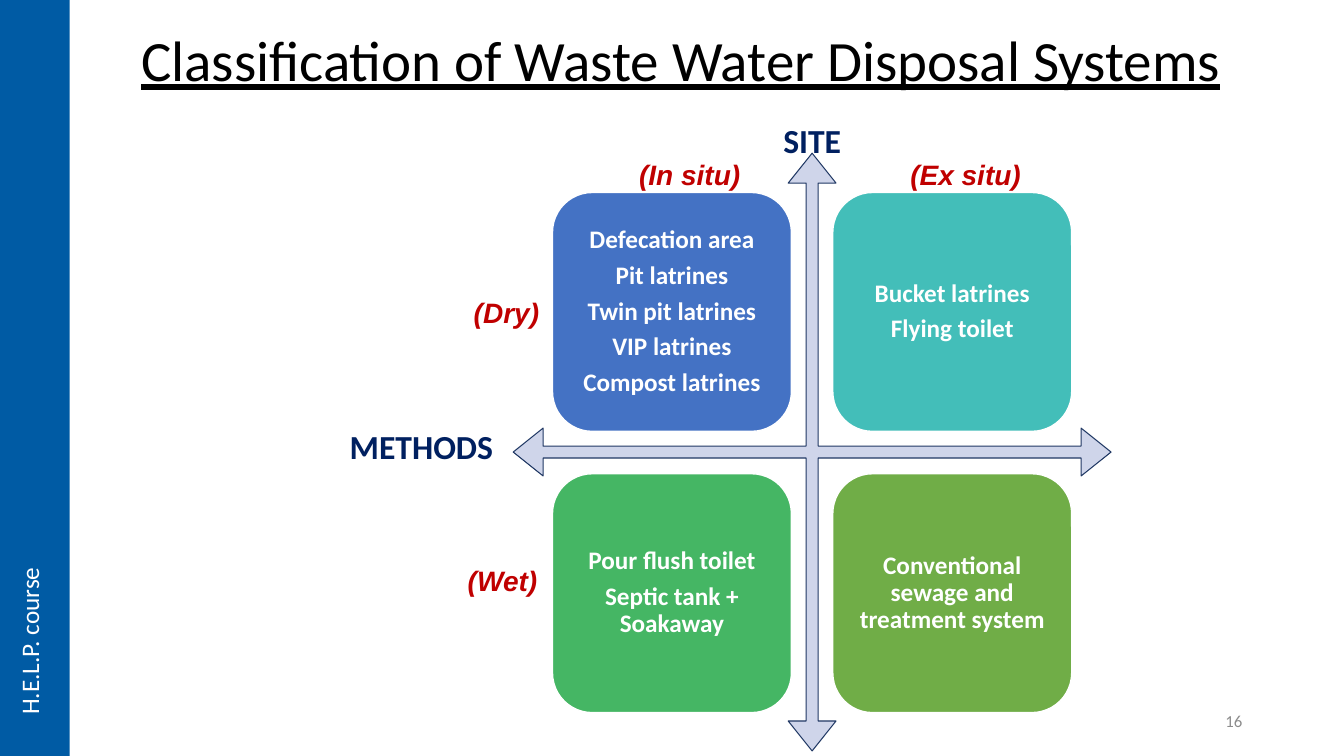
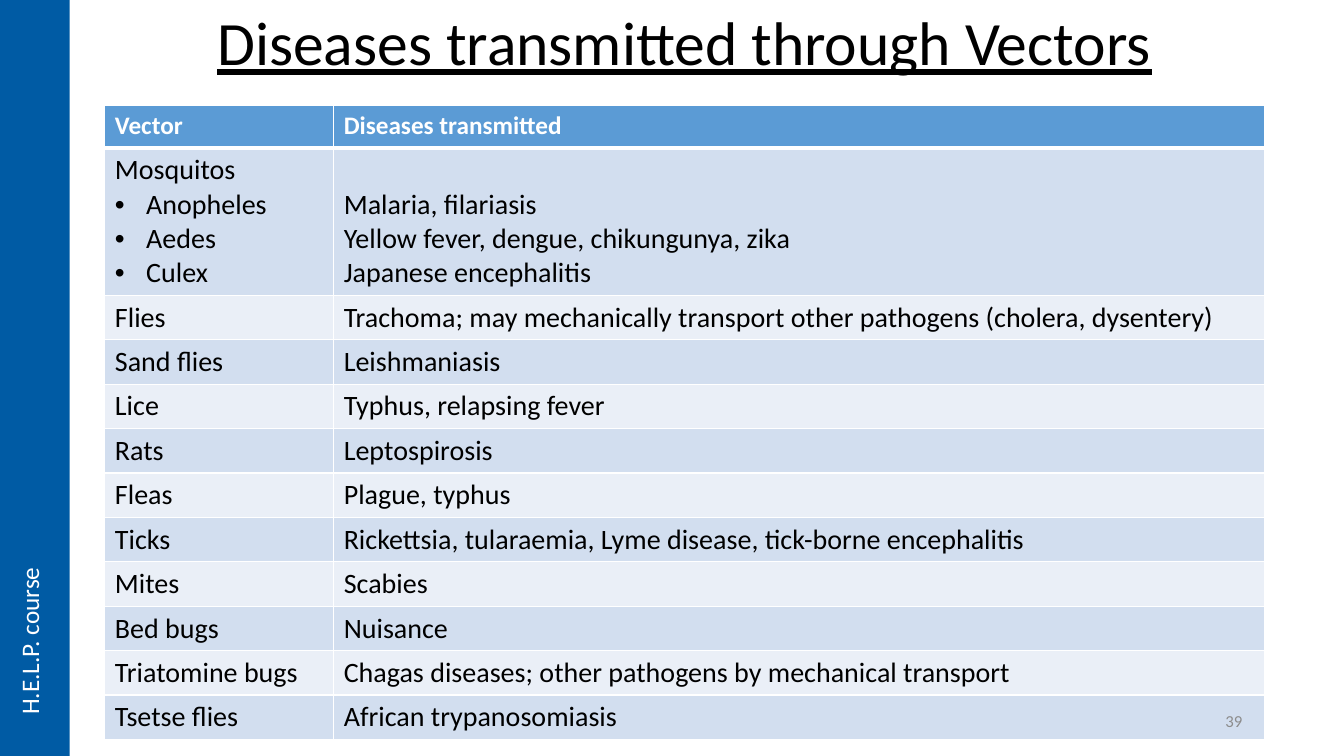
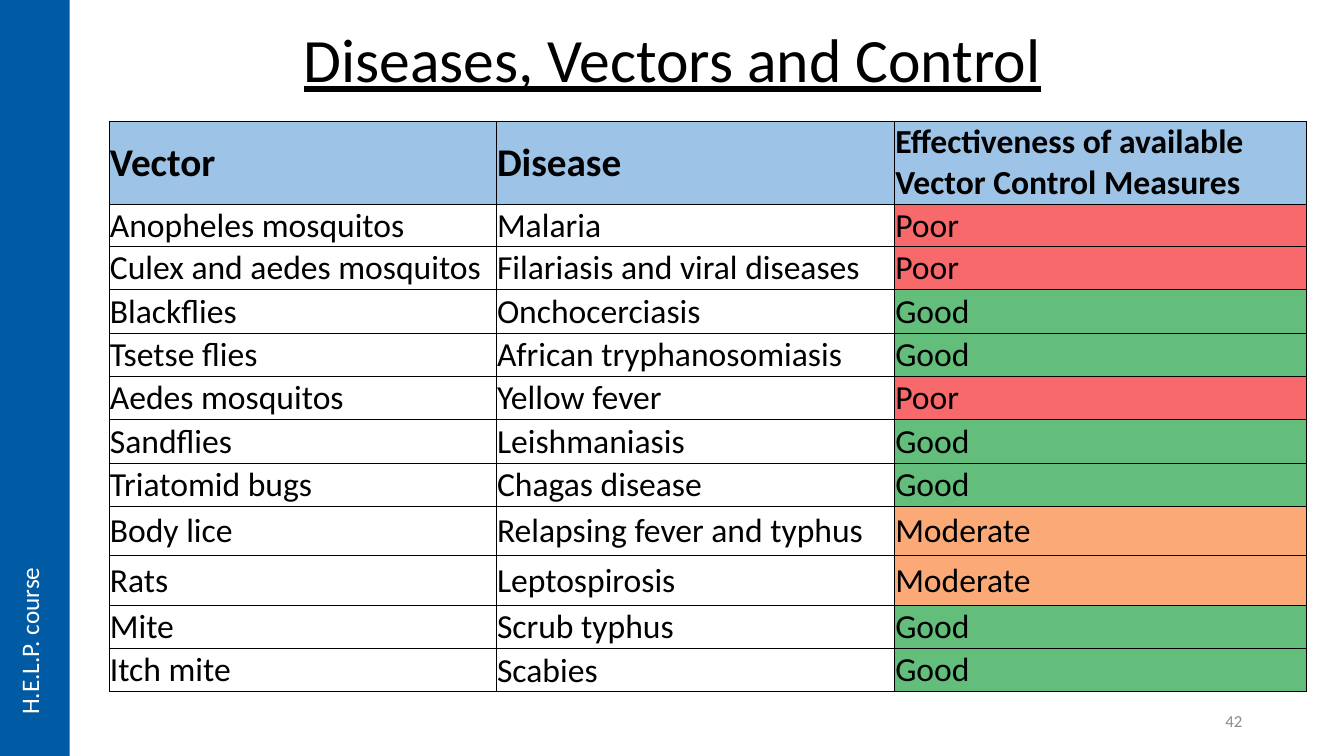
from lxml.etree import SubElement
from pptx import Presentation
from pptx.dml.color import RGBColor
from pptx.enum.shapes import MSO_SHAPE
from pptx.enum.text import MSO_ANCHOR, MSO_AUTO_SIZE, PP_ALIGN
from pptx.oxml.ns import qn
from pptx.util import Inches, Pt

BAND_BLUE = "005BA4"
NAVY = "002060"
RED = "C00000"
GREY = "8C8C8C"
WHITE = "FFFFFF"
BLACK = "000000"

QUADRANTS = [
    ("4472C4", ["Defecation area", "Pit latrines", "Twin pit latrines",
                "VIP latrines", "Compost latrines"]),
    ("43BEB9", ["Bucket latrines", "Flying toilet"]),
    ("45B664", ["Pour flush toilet", "Septic tank + Soakaway"]),
    ("70AD47", ["Conventional sewage and treatment system"]),
]

AXIS_LABELS = [
    ("METHODS", 3.37, 4.18, 1.64),
    ("SITE", 7.67, 1.14, 0.78),
]

SIDE_LABELS = [
    ("(Dry)", 4.6, 2.88, 0.85),
    ("(Wet)", 4.54, 5.54, 0.89),
    ("(In situ)", 6.24, 1.51, 1.21),
    ("(Ex situ)", 8.93, 1.51, 1.3),
]

TRANSMISSION = [
    (["Vector"], ["Diseases transmitted"]),
    (["Mosquitos", "Anopheles", "Aedes", "Culex"],
     ["Malaria, filariasis", "Yellow fever, dengue, chikungunya, zika",
      "Japanese encephalitis"]),
    (["Flies"], ["Trachoma; may mechanically transport other pathogens (cholera, dysentery)"]),
    (["Sand flies"], ["Leishmaniasis"]),
    (["Lice"], ["Typhus, relapsing fever"]),
    (["Rats"], ["Leptospirosis"]),
    (["Fleas"], ["Plague, typhus"]),
    (["Ticks"], ["Rickettsia, tularaemia, Lyme disease, tick-borne encephalitis"]),
    (["Mites"], ["Scabies"]),
    (["Bed bugs"], ["Nuisance"]),
    (["Triatomine bugs"], ["Chagas diseases; other pathogens by mechanical transport"]),
    (["Tsetse flies"], ["African trypanosomiasis"]),
]

CONTROL = [
    ("Vector", "Disease", "Effectiveness of available Vector Control Measures"),
    ("Anopheles mosquitos", "Malaria", "Poor"),
    ("Culex and aedes mosquitos", "Filariasis and viral diseases", "Poor"),
    ("Blackflies", "Onchocerciasis", "Good"),
    ("Tsetse flies", "African tryphanosomiasis", "Good"),
    ("Aedes mosquitos", "Yellow fever", "Poor"),
    ("Sandflies", "Leishmaniasis", "Good"),
    ("Triatomid bugs", "Chagas disease", "Good"),
    ("Body lice", "Relapsing fever and typhus", "Moderate"),
    ("Rats", "Leptospirosis", "Moderate"),
    ("Mite", "Scrub typhus", "Good"),
    ("Itch mite", "Scabies", "Good"),
]

RATING_FILLS = {"Poor": "F8696B", "Good": "63BE7B", "Moderate": "FBAA77"}


def color(value):
    """Turn a hex string into a colour."""
    return RGBColor.from_string(value)


def write(frame, lines, size, ink, bold=False, italic=False, underline=False,
          font="Calibri", align=PP_ALIGN.LEFT, line_spacing=None, space_after=None):
    """Write one paragraph per line into a text frame."""
    for number, line in enumerate(lines):
        para = frame.add_paragraph() if number else frame.paragraphs[0]
        para.alignment = align
        para.line_spacing = line_spacing
        para.space_after = space_after
        span = para.add_run()
        span.text = line
        span.font.name = font
        span.font.size = Pt(size)
        span.font.color.rgb = color(ink)
        span.font.bold = bold
        span.font.italic = italic
        span.font.underline = underline


def add_bullet(para):
    """Give a paragraph a round bullet with a hanging indent."""
    properties = para._p.get_or_add_pPr()
    properties.set("marL", str(Inches(0.31)))
    properties.set("indent", str(Inches(-0.31)))
    SubElement(properties, qn("a:buFont")).set("typeface", "Arial")
    SubElement(properties, qn("a:buChar")).set("char", "•")


def add_label(page, text, left, top, width, height, size, ink, wrap=False, **style):
    """Add a one-line text box and return its frame."""
    box = page.shapes.add_textbox(Inches(left), Inches(top), Inches(width), Inches(height))
    box.text_frame.word_wrap = wrap
    write(box.text_frame, [text], size, ink, **style)
    return box.text_frame


def add_panel(page, kind, left, top, width, height, fill, line=None, weight=1):
    """Add a flat preset shape."""
    panel = page.shapes.add_shape(kind, Inches(left), Inches(top), Inches(width), Inches(height))
    panel.shadow.inherit = False
    panel.fill.solid()
    panel.fill.fore_color.rgb = color(fill)
    if line:
        panel.line.color.rgb = color(line)
        panel.line.width = Pt(weight)
    else:
        panel.line.fill.background()
    return panel


def add_page(deck, title, left, top, size=44):
    """Add a slide with the side band and an underlined title."""
    page = deck.slides.add_slide(deck.slide_layouts[5])
    add_panel(page, MSO_SHAPE.RECTANGLE, 0, 0, 0.69, 7.5, BAND_BLUE)
    course = add_label(page, "H.E.L.P. course", 0.09, 5.61, 0.5, 1.58, 18, WHITE)
    course._txBody.bodyPr.set("vert", "vert270")
    heading = page.shapes.title
    heading.left, heading.top = Inches(left), Inches(top)
    heading.width, heading.height = Inches(11.5), Inches(0.91)
    heading.text_frame.auto_size = MSO_AUTO_SIZE.NONE
    heading.text_frame.vertical_anchor = MSO_ANCHOR.MIDDLE
    write(heading.text_frame, [title], size, BLACK, underline=True,
          align=PP_ALIGN.CENTER, line_spacing=0.9)
    return page


def add_page_number(page, number):
    """Add the page number at the lower right."""
    frame = add_label(page, number, 9.42, 6.95, 3, 0.4, 12, GREY,
                      wrap=True, align=PP_ALIGN.RIGHT)
    frame.vertical_anchor = MSO_ANCHOR.MIDDLE


def set_border(cell, side, ink, weight):
    """Draw one side of a cell's border."""
    line = SubElement(cell._tc.get_or_add_tcPr(), qn(f"a:ln{side}"))
    line.set("w", str(Pt(weight)))
    fill = SubElement(line, qn("a:solidFill"))
    SubElement(fill, qn("a:srgbClr")).set("val", ink)


def add_grid(page, left, top, widths, heights, ink, weight, header_weight):
    """Add an empty table with plain borders."""
    table = page.shapes.add_table(
        len(heights), len(widths), Inches(left), Inches(top),
        Inches(sum(widths)), Inches(sum(heights))).table
    table.first_row = table.horz_banding = False
    for column, width in zip(table.columns, widths):
        column.width = Inches(width)
    for row, height in zip(table.rows, heights):
        row.height = Inches(height)
    for index, row in enumerate(table.rows):
        for cell in row.cells:
            for side in "LRTB":
                under_header = (index, side) in ((0, "B"), (1, "T"))
                set_border(cell, side, ink, header_weight if under_header else weight)
    return table


def fill_cell(cell, fill):
    """Fill a cell, or leave it clear."""
    if fill:
        cell.fill.solid()
        cell.fill.fore_color.rgb = color(fill)
    else:
        cell.fill.background()


def build_classification(deck):
    """Build the matrix of disposal systems."""
    page = add_page(deck, "Classification of Waste Water Disposal Systems", 1, 0.17, 40.7)
    for text, left, top, width in AXIS_LABELS:
        add_label(page, text, left, top, width, 0.51, 24, NAVY, bold=True)
    arrows = add_panel(page, MSO_SHAPE.QUAD_ARROW, 5.09, 1.52, 5.93, 5.93,
                       "CFD5EA", "203864", 0.75)
    for index, value in enumerate((0.02, 0.04, 0.05)):
        arrows.adjustments[index] = value
    for index, (fill, lines) in enumerate(QUADRANTS):
        row, column = divmod(index, 2)
        quadrant = add_panel(page, MSO_SHAPE.ROUNDED_RECTANGLE, 5.48 + 2.78 * column,
                             1.91 + 2.79 * row, 2.37, 2.37, fill, WHITE)
        frame = quadrant.text_frame
        frame.word_wrap = True
        frame.vertical_anchor = MSO_ANCHOR.MIDDLE
        frame.margin_left = frame.margin_right = Inches(0.07)
        frame.margin_top = frame.margin_bottom = Inches(0.07)
        write(frame, lines, 18, WHITE, bold=True, align=PP_ALIGN.CENTER,
              line_spacing=0.9, space_after=Pt(6))
    for text, left, top, width in SIDE_LABELS:
        add_label(page, text, left, top, width, 0.44, 20, RED,
                  bold=True, italic=True, font="Arial")
    add_page_number(page, "16")


def build_transmission(deck):
    """Build the table of diseases by vector."""
    page = add_page(deck, "Diseases transmitted through Vectors", 1.04, 0)
    heights = [0.42, 1.46] + [0.44] * 10
    table = add_grid(page, 1.04, 1.05, [2.27, 9.23], heights, WHITE, 1, 3)
    for index, entries in enumerate(TRANSMISSION):
        header = index == 0
        fill = "5B9BD5" if header else ("EAEFF7", "D2DEEF")[index % 2]
        for cell, lines in zip(table.rows[index].cells, entries):
            fill_cell(cell, fill)
            write(cell.text_frame, lines, 18 if header else 20,
                  WHITE if header else BLACK, bold=header)
    for para in table.cell(1, 0).text_frame.paragraphs[1:]:
        add_bullet(para)
    table.cell(1, 1).vertical_anchor = MSO_ANCHOR.BOTTOM
    add_page_number(page, "39")


def build_control(deck):
    """Build the table of control effectiveness."""
    page = add_page(deck, "Diseases, Vectors and Control", 0.92, 0.17)
    heights = [0.82, 0.42] + [0.43] * 6 + [0.49] * 2 + [0.43] * 2
    table = add_grid(page, 1.08, 1.2, [3.84, 3.95, 4.09], heights, BLACK, 0.5, 0.5)
    for index, entries in enumerate(CONTROL):
        header = index == 0
        for column, text in enumerate(entries):
            cell = table.cell(index, column)
            cell.margin_left = cell.margin_right = cell.margin_top = Inches(0.01)
            cell.margin_bottom = 0
            cell.vertical_anchor = MSO_ANCHOR.MIDDLE
            fill_cell(cell, "9DC3E6" if header else RATING_FILLS.get(text))
            write(cell.text_frame, [text], 28 if header and column < 2 else 24,
                  BLACK, bold=header)
    table.cell(11, 1).vertical_anchor = MSO_ANCHOR.BOTTOM
    add_page_number(page, "42")


def main():
    """Build and save the deck."""
    deck = Presentation()
    deck.slide_width, deck.slide_height = Inches(13.33), Inches(7.5)
    build_classification(deck)
    build_transmission(deck)
    build_control(deck)
    deck.save("out.pptx")


if __name__ == "__main__":
    main()
